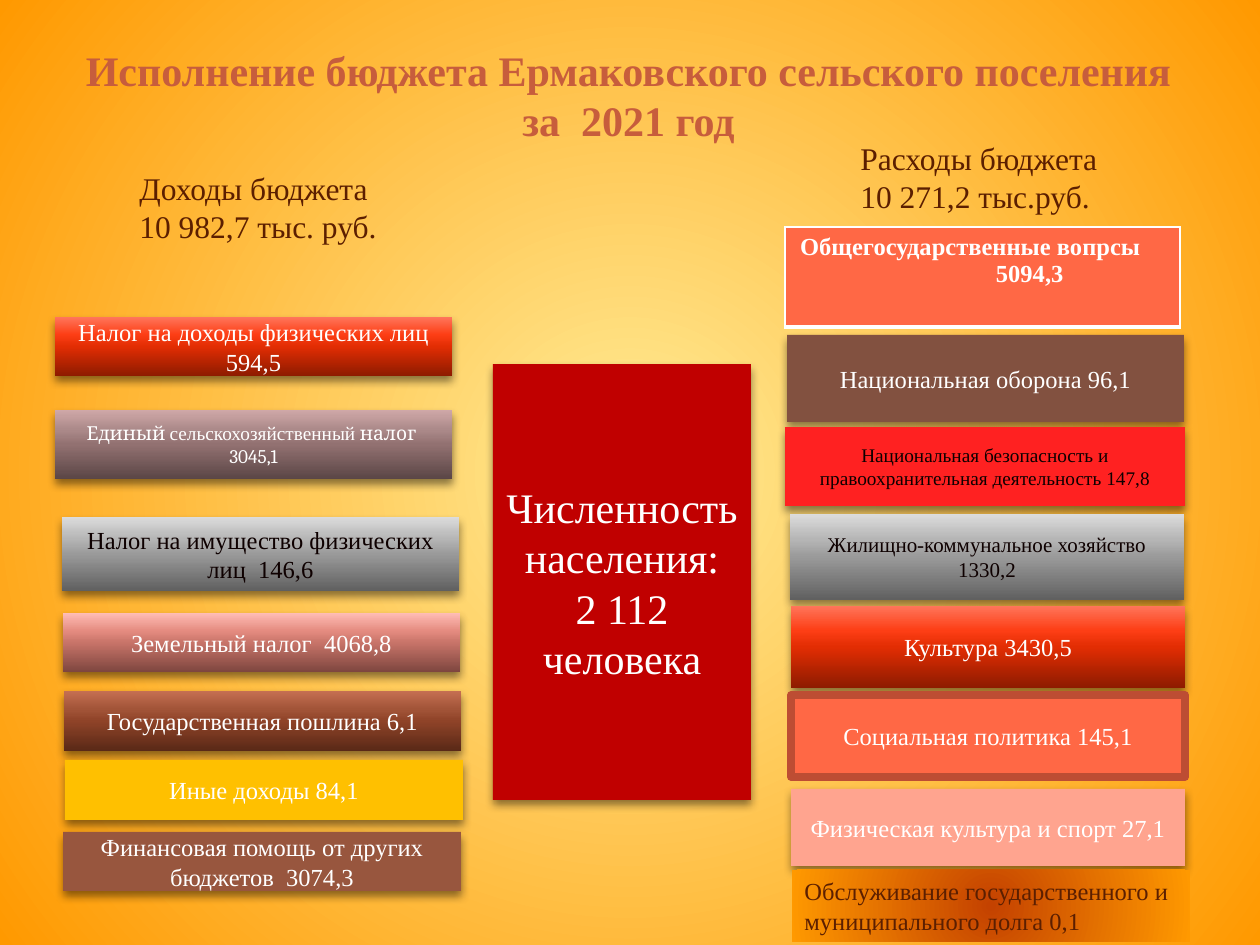
from lxml import etree
from pptx import Presentation
from pptx.dml.color import RGBColor
from pptx.enum.shapes import MSO_SHAPE
from pptx.enum.text import MSO_ANCHOR, MSO_AUTO_SIZE, PP_ALIGN
from pptx.oxml import parse_xml
from pptx.oxml.ns import nsdecls, qn
from pptx.util import Emu, Pt

RECT = MSO_SHAPE.RECTANGLE
TOP, MIDDLE = MSO_ANCHOR.TOP, MSO_ANCHOR.MIDDLE
LEFT, CENTER = PP_ALIGN.LEFT, PP_ALIGN.CENTER
NO_FIT = MSO_AUTO_SIZE.NONE
EMU_PER_PX = 914400 / 126

COLORS = {
    "white": "FFFFFF", "black": "0E0000", "brown": "5C1F00",
    "dark_red": "C00000", "umber": "825140", "sienna": "98563E",
    "gold": "FFC000", "red": "FF2121", "coral": "FF6845",
    "salmon": "FFA48F", "rust": "BD4D33",
}
POSITIONS = (0, 50, 70, 100)
GRADIENTS = {
    "fire": ("8E1B00", "E22D03", "FD3E15", "FF755A"),
    "mauve": ("5B4646", "927171", "AA8888", "CFA8A8"),
    "gray": ("606060", "9A9A9A", "B5B5B5", "DCDCDC"),
    "pink": ("7E463F", "C87469", "E58C81", "FFBDB5"),
    "copper": ("5A2917", "8F4328", "A25438", "C56F52"),
}


def px(value):
    return Emu(round(value * EMU_PER_PX))


def gradient(stops, angle=None):
    marks = "".join(
        f'<a:gs pos="{pos * 1000}"><a:srgbClr val="{color}"/></a:gs>'
        for pos, color in stops
    )
    if angle is None:
        direction = ('<a:path path="circle"><a:fillToRect l="50000" t="50000" '
                     'r="50000" b="50000"/></a:path>')
    else:
        direction = f'<a:lin ang="{angle * 60000}" scaled="0"/>'
    return parse_xml(f'<a:gradFill {nsdecls("a")} rotWithShape="1">'
                     f'<a:gsLst>{marks}</a:gsLst>{direction}</a:gradFill>')


def swap_fill(parent, grad):
    parent.replace(parent.find(qn("a:solidFill")), grad)


class BudgetSlide:
    font = "Times New Roman"

    def __init__(self, slide):
        self.slide = slide

    def background(self, stops):
        self.slide.background.fill.solid()
        swap_fill(self.slide._element.find(".//" + qn("p:bgPr")), gradient(stops))

    def add_text(self, frame, paragraphs, size, color, align=LEFT, bold=False):
        for index, content in enumerate(paragraphs):
            paragraph = frame.paragraphs[0] if index == 0 else frame.add_paragraph()
            paragraph.alignment = align
            pieces = [(content, self.font)] if isinstance(content, str) else content
            for text, font in pieces:
                run = paragraph.add_run()
                run.text = text
                run.font.name = font
                run.font.size = Pt(size)
                run.font.bold = bold
                run.font.color.rgb = RGBColor.from_string(COLORS[color])

    def title(self, box, text, stops):
        heading = self.slide.shapes.title
        heading.left, heading.top, heading.width, heading.height = map(px, box)
        frame = heading.text_frame
        frame.word_wrap = True
        frame.auto_size = NO_FIT
        frame.vertical_anchor = TOP
        self.add_text(frame, [text], 24, "rust", CENTER, True)
        run = frame.paragraphs[0].runs[0]
        swap_fill(run._r.get_or_add_rPr(), gradient(stops, 90))

    def label(self, box, lines):
        frame = self.slide.shapes.add_textbox(*map(px, box)).text_frame
        frame.word_wrap = True
        self.add_text(frame, lines, 18, "brown")

    def block(self, box, lines, fill, size=14, color="white", shadow=True,
              align=CENTER, anchor=MIDDLE):
        block = self.slide.shapes.add_shape(RECT, *map(px, box))
        block.fill.solid()
        if fill in GRADIENTS:
            swap_fill(block._element.spPr,
                      gradient(zip(POSITIONS, GRADIENTS[fill]), 270))
        else:
            block.fill.fore_color.rgb = RGBColor.from_string(COLORS[fill])
        block.line.fill.background()
        block.shadow.inherit = False
        if shadow:
            block._element.spPr.find(qn("a:effectLst")).append(parse_xml(
                f'<a:outerShdw {nsdecls("a")} blurRad="63500" dist="38100" '
                'dir="5400000" rotWithShape="0"><a:srgbClr val="000000">'
                '<a:alpha val="45000"/></a:srgbClr></a:outerShdw>'))
        frame = block.text_frame
        frame.word_wrap = True
        frame.vertical_anchor = anchor
        self.add_text(frame, lines, size, color, align)
        return block

    def outline(self, block, color, width):
        block.line.color.rgb = RGBColor.from_string(COLORS[color])
        block.line.width = Pt(width)
        etree.SubElement(block.line._get_or_add_ln(), qn("a:round"))

    def table(self, box, lines, fill, second_indent):
        table = self.slide.shapes.add_table(1, 1, *map(px, box)).table
        table.first_row = table.horz_banding = False
        cell = table.cell(0, 0)
        cell.margin_left = px(15)
        self.add_text(cell.text_frame, lines, 14, "white", LEFT, True)
        amount = cell.text_frame.paragraphs[1]
        amount.alignment = CENTER
        amount._p.get_or_add_pPr().set("marL", str(px(second_indent)))
        borders = cell._tc.get_or_add_tcPr()
        for side, width in (("L", 1), ("R", 1), ("T", 1), ("B", 3)):
            borders.append(parse_xml(
                f'<a:ln{side} {nsdecls("a")} w="{Pt(width)}"><a:solidFill>'
                f'<a:srgbClr val="{COLORS["white"]}"/></a:solidFill></a:ln{side}>'))
        cell.fill.solid()
        cell.fill.fore_color.rgb = RGBColor.from_string(COLORS[fill])


def main():
    deck = Presentation()
    deck.slide_width, deck.slide_height = px(1260), px(945)
    budget = BudgetSlide(deck.slides.add_slide(deck.slide_layouts[5]))
    budget.background([(0, "FFEC97"), (100, "FF9900")])
    budget.title((68, 38, 1121, 115),
                 "Исполнение бюджета Ермаковского сельского поселения за  2021 год",
                 [(0, "F69D85"), (75, "C75D3C"), (100, "BD4316")])
    budget.label((127, 163, 273, 89), ["Доходы бюджета", "10 982,7 тыс. руб."])
    budget.label((848, 133, 388, 118), ["Расходы бюджета", "10 271,2 тыс.руб."])

    farm_tax = [[("Единый ", "Cambria"), ("сельскохозяйственный", budget.font),
                 (" налог ", "Cambria")], [("3045,1", "Cambria")]]
    income = [
        ((55, 317, 397, 59), ["Налог на доходы физических лиц 594,5"], "fire"),
        ((55, 410, 397, 69), farm_tax, "mauve", 11),
        ((62, 517, 397, 74), ["Налог на имущество физических лиц  146,6"],
         "gray", 14, "black"),
        ((63, 613, 397, 59), ["Земельный налог  4068,8"], "pink"),
        ((64, 691, 397, 60), ["Государственная пошлина 6,1"], "copper"),
        ((65, 760, 398, 60), ["Иные доходы 84,1"], "gold"),
        ((63, 832, 398, 59), ["Финансовая помощь от других бюджетов  3074,3"],
         "sienna"),
    ]
    expenses = [
        ((787, 335, 397, 87), ["Национальная оборона 96,1"], "umber"),
        ((785, 427, 400, 79),
         ["Национальная безопасность и правоохранительная деятельность 147,8"],
         "red", 11, "black"),
        ((790, 514, 394, 86), ["Жилищно-коммунальное хозяйство", "1330,2"],
         "gray", 12, "black"),
        ((791, 606, 394, 82), ["Культура 3430,5"], "fire"),
        ((791, 789, 394, 77), ["Физическая культура и спорт 27,1"], "salmon"),
    ]
    population = ((493, 364, 258, 436),
                  ["Численность населения:", "2 112", "человека"], "dark_red", 24)
    for entry in [*income, *expenses, population]:
        budget.block(*entry)

    social = budget.block((791, 695, 394, 82), ["Социальная политика 145,1"],
                          "coral", shadow=False)
    budget.outline(social, "rust", 4.33)
    debt = budget.block((792, 870, 398, 72),
                        ["Обслуживание государственного и муниципального долга 0,1"],
                        "gold", 14, "brown", False, LEFT, TOP)
    swap_fill(debt._element.spPr, gradient([(0, "C44200"), (100, "FF9900")]))
    budget.table((785, 227, 395, 100), ["Общегосударственные вопрсы", "5094,3"],
                 "coral", 92)
    deck.save("out.pptx")


if __name__ == "__main__":
    main()
